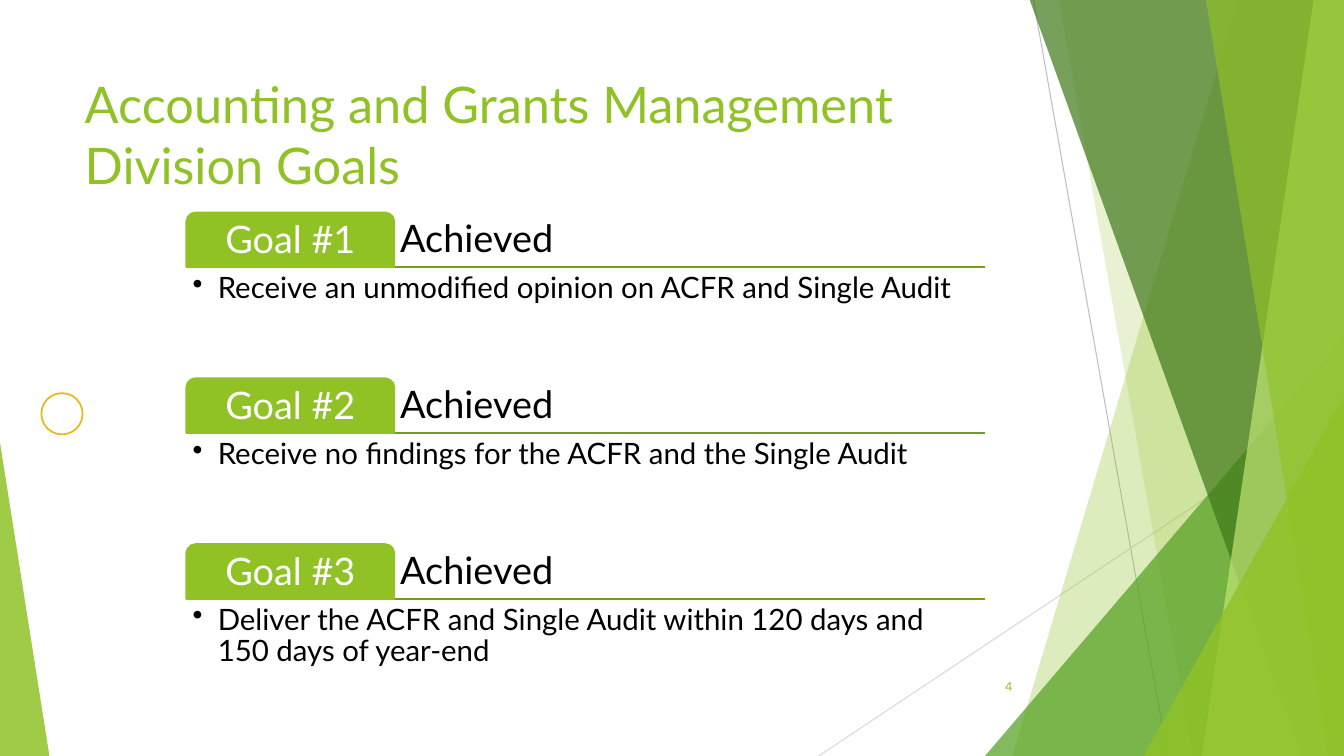
from lxml.etree import SubElement as Sub
from pptx import Presentation
from pptx.dml.color import RGBColor
from pptx.enum.shapes import MSO_CONNECTOR as Conn, MSO_SHAPE as Shape
from pptx.enum.text import MSO_ANCHOR as Anchor, PP_ALIGN as Align
from pptx.oxml.ns import qn
from pptx.util import Inches, Pt

LIME = RGBColor(0x90, 0xC2, 0x26)
GREEN = RGBColor(0x54, 0xA0, 0x21)
DARK = RGBColor(0x3F, 0x78, 0x19)
PALE = RGBColor(0xC0, 0xE4, 0x74)
RULE = RGBColor(0x73, 0x9B, 0x1E)
GOLD = RGBColor(0xE6, 0xB9, 0x1E)
GREY = RGBColor(0xBF, 0xBF, 0xBF)
MIST = RGBColor(0xD9, 0xD9, 0xD9)
BLACK = RGBColor(0, 0, 0)
WHITE = RGBColor(0xFF, 0xFF, 0xFF)

W, H = 13.33, 7.5
LEFT, SPLIT, RIGHT = 1.85, 3.91, 9.77
TOP, STEP, TAB, BODY = 2.11, 1.645, 0.54, 1.08
PAD = 0.06

GOALS = [
    "Receive an unmodified opinion on ACFR and Single Audit",
    "Receive no findings for the ACFR and the Single Audit",
    "Deliver the ACFR and Single Audit within 120 days and 150 days of year-end",
]


def paint(shape, color, alpha):
    shape.shadow.inherit = False
    shape.fill.solid()
    shape.fill.fore_color.rgb = color
    shape.line.fill.background()
    tone = shape.fill._xPr.find(qn("a:solidFill"))[0]
    Sub(tone, qn("a:alpha"), val=str(alpha * 1000))


def write(shape, text, size, color, anchor, align=Align.LEFT, pad=PAD):
    frame = shape.text_frame
    frame.word_wrap = True
    frame.vertical_anchor = anchor
    frame.margin_left = frame.margin_right = Inches(pad)
    frame.margin_top = frame.margin_bottom = Inches(min(pad, PAD))
    para = frame.paragraphs[0]
    para.text = text
    para.alignment = align
    font = para.runs[0].font
    font.name, font.size, font.color.rgb = "Lato", Pt(size), color
    return para


deck = Presentation()
deck.slide_width, deck.slide_height = Inches(W), Inches(H)
slide = deck.slides.add_slide(deck.slide_layouts[5])
shapes = slide.shapes

lines = [
    (10.25, 0, 11.58, H, GREY, 0.75),
    (W, 4.03, 8.12, H, MIST, 0.75),
]
for row in range(len(GOALS)):
    base = TOP + row * STEP + TAB
    lines.append((LEFT, base, RIGHT, base, RULE, 1.5))
for x1, y1, x2, y2, color, width in lines:
    line = shapes.add_connector(
        Conn.STRAIGHT, Inches(x1), Inches(y1), Inches(x2), Inches(y2))
    line.line.color.rgb = color
    line.line.width = Pt(width)
    Sub(line._element.spPr, qn("a:effectLst"))

bands = [
    ("band", 12.28, 10.04, LIME, 30),
    ("band", 10.5, 11.83, LIME, 20),
    ("peak", 9.77, 3.33, 3.56, 1, GREEN, 72),
    ("band", 10.21, 12.91, DARK, 70),
    ("band", 13.03, 11.92, PALE, 70),
    ("band", 11.96, 13.18, LIME, 65),
    ("peak", 11.34, 3.93, 1.99, 1, LIME, 80),
    ("peak", 0, 4.39, 0.49, 0, LIME, 85),
]
for kind, *spec_row, color, alpha in bands:
    if kind == "band":
        head, foot = spec_row
        pen = shapes.build_freeform(Inches(head), Inches(-0.01))
        pen.add_line_segments(
            [(Inches(x), Inches(y)) for x, y in ((W, -0.01), (W, H), (foot, H))])
        facet = pen.convert_to_shape()
    else:
        x, y, width, tip = spec_row
        facet = shapes.add_shape(
            Shape.ISOSCELES_TRIANGLE, Inches(x), Inches(y), Inches(width), Inches(H - y))
        facet.adjustments[0] = tip
    paint(facet, color, alpha)

badge = shapes.add_shape(
    Shape.OVAL, Inches(0.41), Inches(3.9), Inches(0.41), Inches(0.41))
badge.shadow.inherit = False
badge.fill.background()
badge.line.color.rgb = GOLD
badge.line.width = Pt(1.25)

title = shapes.title
title.left, title.top = Inches(0.74), Inches(0.67)
title.width, title.height = Inches(9.4), Inches(1.44)
write(title, "Accounting and Grants Management Division Goals", 36, LIME,
      Anchor.TOP, pad=0.1)

page = shapes.add_textbox(Inches(9.39), Inches(6.61), Inches(0.75), Inches(0.4))
write(page, "4", 9, LIME, Anchor.MIDDLE, Align.RIGHT, 0.1)

for row, goal in enumerate(GOALS):
    y = TOP + row * STEP
    state = shapes.add_textbox(
        Inches(SPLIT), Inches(y), Inches(RIGHT - SPLIT), Inches(TAB))
    write(state, "Achieved", 27, BLACK, Anchor.BOTTOM).line_spacing = 0.9

    tab = shapes.add_shape(
        Shape.ROUND_2_SAME_RECTANGLE,
        Inches(LEFT), Inches(y), Inches(SPLIT - LEFT), Inches(TAB))
    paint(tab, LIME, 100)
    tab.line.color.rgb = LIME
    tab.line.width = Pt(1.5)
    write(tab, f"Goal #{row + 1}", 27, WHITE, Anchor.MIDDLE,
          Align.CENTER).line_spacing = 0.9

    body = shapes.add_textbox(
        Inches(LEFT), Inches(y + TAB), Inches(RIGHT - LEFT), Inches(BODY))
    para = write(body, goal, 21, BLACK, Anchor.TOP)
    para.line_spacing = 0.9
    props = para._p.get_or_add_pPr()
    props.set("marL", str(Inches(0.25)))
    props.set("indent", str(-Inches(0.25)))
    Sub(props, qn("a:buChar"), char="•")

deck.save("out.pptx")
